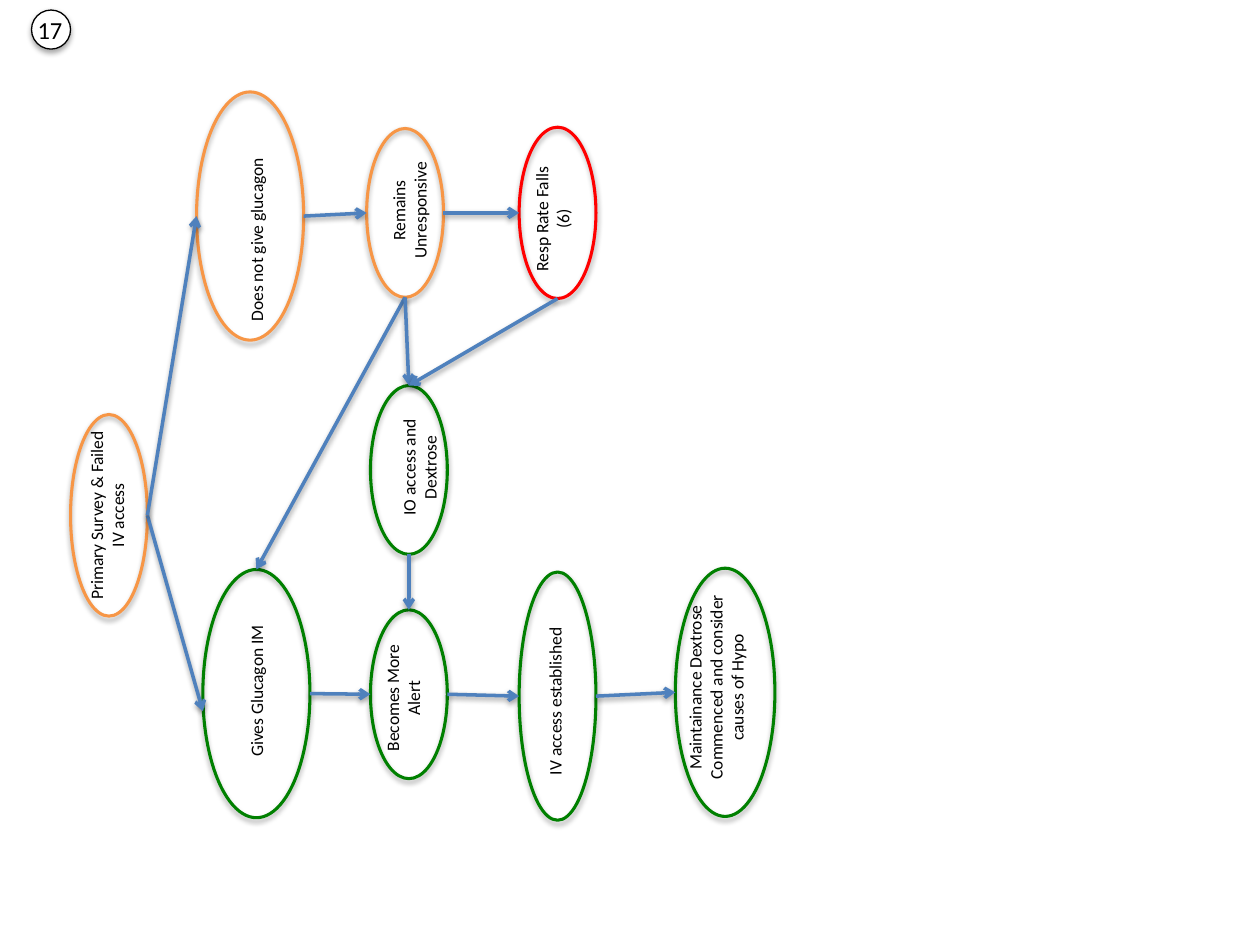
"""Build slide 17: a decision flow for a hypoglycaemia scenario, read sideways."""
from pptx import Presentation
from pptx.dml.color import RGBColor
from pptx.enum import shapes, text
from pptx.oxml import parse_xml
from pptx.oxml.ns import nsdecls, qn
from pptx.util import Inches, Pt

ORANGE, GREEN, RED, BLUE, BLACK, WHITE = "F79646", "008000", "FF0000", "4F81BD", "000000", "FFFFFF"
CENTER, LEFT = text.PP_ALIGN.CENTER, text.PP_ALIGN.LEFT

STEPS = {
    "survey": ("Primary Survey & Failed IV access", CENTER, (0.05, 3.87, 1.6, 0.44),
               ORANGE, (0.56, 3.29, 0.61, 1.6)),
    "glucagon": ("Gives Glucagon IM", CENTER, (1.07, 5.35, 1.93, 0.27),
                 GREEN, (1.61, 4.52, 0.85, 1.97)),
    "alert": ("Becomes More Alert", CENTER, (2.59, 5.32, 1.22, 0.44),
              GREEN, (2.94, 4.84, 0.61, 1.34)),
    "iv": ("IV access established", LEFT, (3.46, 5.17, 1.89, 0.27),
           GREEN, (4.12, 4.54, 0.61, 1.97)),
    "maintenance": ("Maintainance Dextrose Commenced and consider causes of Hypo", CENTER,
                    (4.74, 5.15, 1.89, 0.61), GREEN, (5.36, 4.51, 0.79, 1.97)),
    "resp": ("Resp Rate Falls (6)", CENTER, (3.85, 1.52, 1.07, 0.44),
             RED, (4.12, 1.01, 0.61, 1.36)),
    "no_glucagon": ("Does not give glucagon", LEFT, (1.07, 1.55, 1.93, 0.27),
                    ORANGE, (1.56, 0.73, 0.85, 1.97)),
    "unresponsive": ("Remains Unresponsive", CENTER, (2.64, 1.45, 1.22, 0.44),
                     ORANGE, (2.91, 1.02, 0.61, 1.34)),
    "io": ("IO access and Dextrose", CENTER, (2.72, 3.49, 1.22, 0.44),
           GREEN, (2.94, 3.06, 0.61, 1.34)),
}
ARROWS = [
    ("survey", "right", "glucagon", "left", 0.14),
    ("glucagon", "right", "alert", "left", 0),
    ("unresponsive", "bottom", "glucagon", "top", 0),
    ("alert", "right", "iv", "left", 0),
    ("iv", "right", "maintenance", "left", 0),
    ("unresponsive", "bottom", "io", "top", 0),
    ("io", "bottom", "alert", "top", 0),
    ("resp", "bottom", "io", "top", 0),
    ("unresponsive", "right", "resp", "left", 0),
    ("no_glucagon", "right", "unresponsive", "left", 0),
    ("survey", "right", "no_glucagon", "left", 0),
]
SIDES = {"left": (0, 0.5), "right": (1, 0.5), "top": (0.5, 0), "bottom": (0.5, 1)}


def color(value):
    return RGBColor.from_string(value)


def add_shadow(item, distance, alpha):
    item._element.spPr.append(parse_xml(
        f'<a:effectLst {nsdecls("a")}><a:outerShdw blurRad="40000" dist="{distance}" '
        f'dir="5400000" rotWithShape="0"><a:srgbClr val="{BLACK}"><a:alpha val="{alpha}"/>'
        '</a:srgbClr></a:outerShdw></a:effectLst>'))


def add_ellipse(slide, box, outline, width, fill=None):
    ellipse = slide.shapes.add_shape(shapes.MSO_SHAPE.OVAL, *map(Inches, box))
    if fill:
        ellipse.fill.solid()
        ellipse.fill.fore_color.rgb = color(fill)
    else:
        ellipse.fill.background()
    ellipse.line.color.rgb = color(outline)
    ellipse.line.width = Pt(width)
    add_shadow(ellipse, 23000, 35000)


def add_label(slide, wording, box, size, align=LEFT, rotation=0, wrap=True):
    label = slide.shapes.add_textbox(*map(Inches, box))
    label.rotation = rotation
    frame = label.text_frame
    frame.word_wrap = wrap
    frame.auto_size = text.MSO_AUTO_SIZE.SHAPE_TO_FIT_TEXT
    paragraph = frame.paragraphs[0]
    paragraph.text = wording
    paragraph.alignment = align
    paragraph.font.name = "Calibri"
    paragraph.font.size = Pt(size)
    paragraph.font.color.rgb = color(BLACK)


def anchor(step, side):
    left, top, width, height = STEPS[step][-1]
    across, down = SIDES[side]
    return left + across * width, top + down * height


def add_arrow(slide, start, end):
    arrow = slide.shapes.add_connector(
        shapes.MSO_CONNECTOR.STRAIGHT, *map(Inches, (*start, *end)))
    arrow.line.color.rgb = color(BLUE)
    arrow.line.width = Pt(2)
    arrow.line._get_or_add_ln().makeelement
    head = parse_xml(f'<a:tailEnd {nsdecls("a")} type="arrow"/>')
    arrow._element.spPr.find(qn("a:ln")).append(head)
    add_shadow(arrow, 20000, 38000)


def main():
    deck = Presentation()
    deck.slide_width, deck.slide_height = Inches(10), Inches(7.5)
    slide = deck.slides.add_slide(deck.slide_layouts[6])

    add_ellipse(slide, (0.25, 0.08, 0.31, 0.31), BLACK, 0.75, WHITE)
    add_label(slide, "17", (0.2, 0.07, 0.4, 0.34), 14, wrap=False)

    for wording, align, label_box, outline, ellipse_box in STEPS.values():
        add_label(slide, wording, label_box, 10, align, rotation=270)
        add_ellipse(slide, ellipse_box, outline, 1.75)

    for source, exit_side, target, entry_side, drop in ARROWS:
        x, y = anchor(target, entry_side)
        add_arrow(slide, anchor(source, exit_side), (x, y + drop))

    deck.save("out.pptx")


if __name__ == "__main__":
    main()
